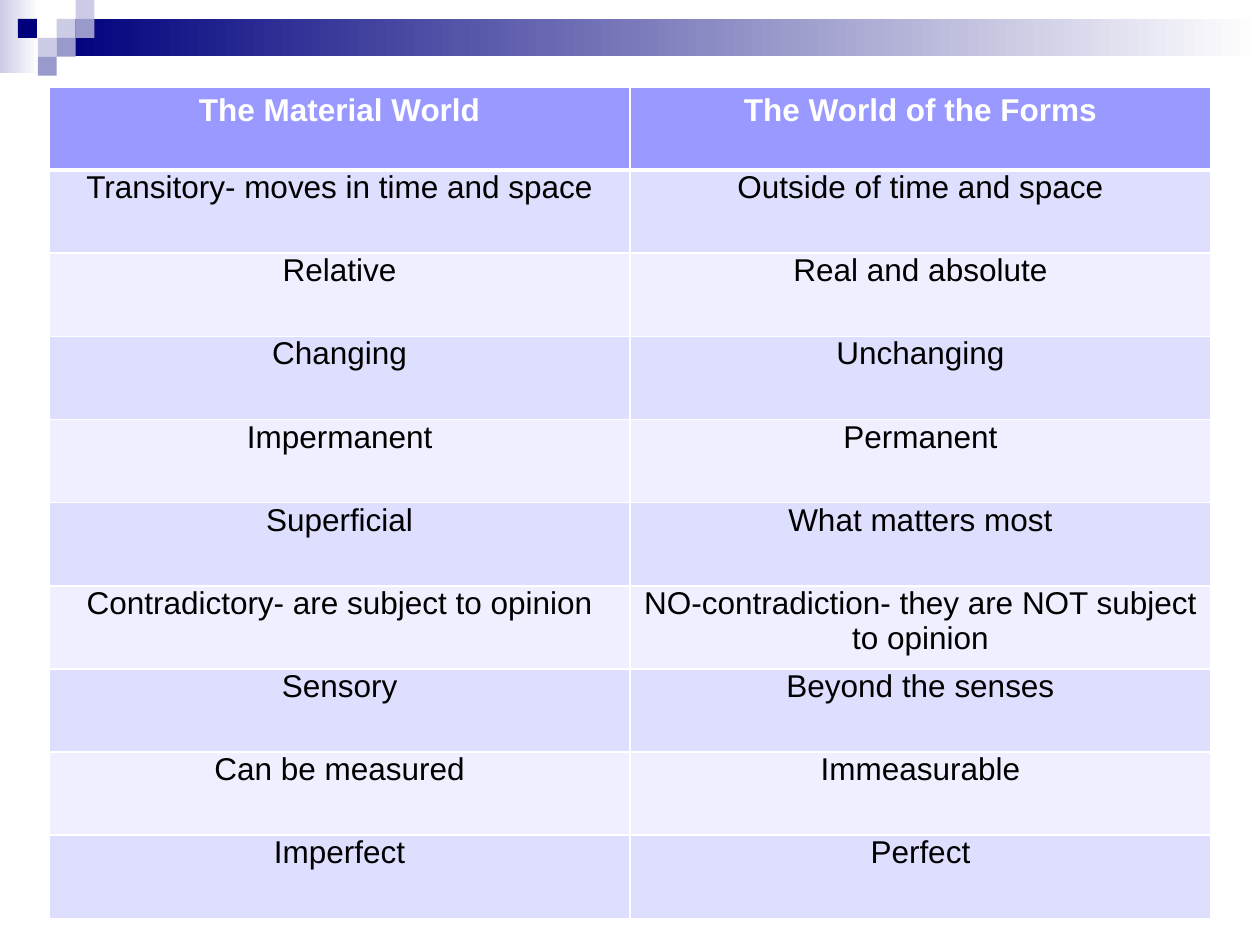
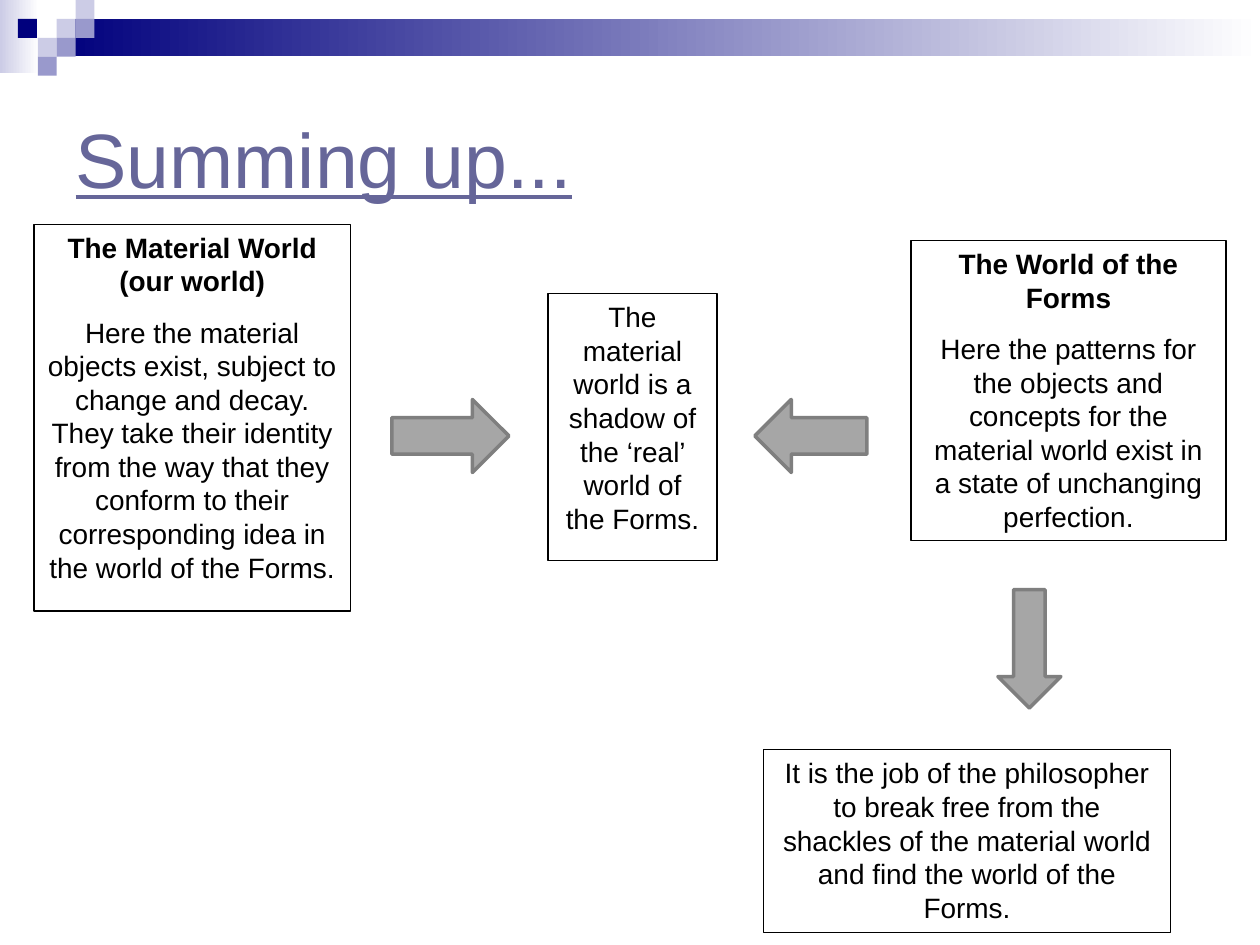
from lxml import etree
from pptx import Presentation
from pptx.dml.color import RGBColor as RGB
from pptx.enum.shapes import MSO_SHAPE as SHAPE
from pptx.enum.text import MSO_ANCHOR as ANCHOR, MSO_AUTO_SIZE as FIT, PP_ALIGN as ALIGN
from pptx.oxml.ns import qn
from pptx.util import Inches, Pt

# Style: the page is a grid of 100 columns by 75 rows
COLORS = {
    "navy": "00007D", "mist": "CCCCE6", "lilac": "9999CC", "title": "666699",
    "head": "9999FF", "odd": "DEDEFF", "even": "EFEFFF",
    "white": "FFFFFF", "black": "000000", "arrow": "A6A6A6", "edge": "7F7F7F",
}
FONT = "Arial"
WIDTH, HEIGHT = Inches(10), Inches(7.5)
COL, ROW = WIDTH / 100, HEIGHT / 75
TITLE_ONLY, BLANK = 5, 6


class Deck:
    def __init__(self):
        self.prs = Presentation()
        self.prs.slide_width, self.prs.slide_height = WIDTH, HEIGHT
        self.s = None

    @staticmethod
    def color(name):
        return RGB.from_string(COLORS[name])

    @staticmethod
    def place(x, y, w, h):
        return round(x * COL), round(y * ROW), round(w * COL), round(h * ROW)

    def new_slide(self, title=None):
        layout = self.prs.slide_layouts[TITLE_ONLY if title else BLANK]
        self.s = self.prs.slides.add_slide(layout)
        self.band()
        if title:
            self.title(title)

    def format(self, p, size, color, bold=False, align=ALIGN.CENTER):
        p.alignment = align
        for r in p.runs:
            r.font.name, r.font.size, r.font.bold = FONT, Pt(size), bold
            r.font.color.rgb = self.color(color)

    def shape(self, kind, at, fill, line=None, width=0.75):
        sp = self.s.shapes.add_shape(kind, *self.place(*at))
        sp.shadow.inherit = False
        sp.fill.solid()
        sp.fill.fore_color.rgb = self.color(fill)
        if line:
            sp.line.color.rgb = self.color(line)
            sp.line.width = Pt(width)
        else:
            sp.line.fill.background()
        return sp

    def fade(self, at, start):
        sp = self.shape(SHAPE.RECTANGLE, at, start)
        sp.fill.gradient()
        sp.fill.gradient_angle = 0
        for stop, name, pos in zip(sp.fill.gradient_stops, (start, "white"), (0, 1)):
            stop.color.rgb = self.color(name)
            stop.position = pos

    def band(self):
        """Fading band and checker squares at the top of each slide."""
        self.fade((0, 0, 3.1, 5.8), "mist")
        self.fade((4.5, 1.5, 95.5, 2.95), "navy")
        side = 1.5
        squares = [(3, 1, "mist"), (4, 0, "mist"), (4, 1, "lilac"), (2, 2, "mist"),
                   (0.95, 1, "navy"), (3, 2, "lilac"), (2, 3, "lilac")]
        for col, row, name in squares:
            self.shape(SHAPE.RECTANGLE, (col * side, row * side, side, side), name)

    def title(self, text):
        sp = self.s.shapes.title
        sp.left, sp.top, sp.width, sp.height = self.place(5, 5, 90, 15)
        tf = sp.text_frame
        tf.text = text
        tf.auto_size, tf.vertical_anchor = FIT.NONE, ANCHOR.MIDDLE
        p = tf.paragraphs[0]
        self.format(p, 44, "title", align=ALIGN.LEFT)
        p.runs[0].font.underline = True

    def box(self, at, body, heading=None):
        tf = self.shape(SHAPE.RECTANGLE, at, "white", "black").text_frame
        tf.word_wrap, tf.vertical_anchor = True, ANCHOR.TOP
        tf.text = f"{heading}\n{body}" if heading else body
        for p in tf.paragraphs:
            self.format(p, 16, "black", bold=p.text == heading)
            p.space_after = Pt(10)

    def arrow(self, kind, at):
        self.shape(kind, at, "arrow", "edge", 2)

    def border(self, cell, side, width):
        ln = etree.SubElement(cell._tc.get_or_add_tcPr(), qn(f"a:ln{side}"), w=str(Pt(width)))
        fill = etree.SubElement(ln, qn("a:solidFill"))
        etree.SubElement(fill, qn("a:srgbClr"), val=COLORS["white"])

    def table(self, at, rows):
        frame = self.s.shapes.add_table(len(rows), len(rows[0]), *self.place(*at))
        for i, row in enumerate(rows):
            for j, text in enumerate(row):
                cell = frame.table.cell(i, j)
                cell.text = text
                head = i == 0
                self.format(cell.text_frame.paragraphs[0], 18,
                            "white" if head else "black", bold=head)
                if not head:
                    cell.margin_left = cell.margin_right = Inches(0.07)
                    cell.margin_top = cell.margin_bottom = 0
                # The rule under the heading row is thicker
                for side, width in (("L", 1), ("R", 1), ("T", 3 if i == 1 else 1),
                                    ("B", 3 if head else 1)):
                    self.border(cell, side, width)
                cell.fill.solid()
                name = "head" if head else "odd" if i % 2 else "even"
                cell.fill.fore_color.rgb = self.color(name)


def main():
    deck = Deck()

    # Slide 1: the two worlds compared
    deck.new_slide()
    deck.table((3.9, 6.9, 92.2, 66), [
        ("The Material World", "The World of the Forms"),
        ("Transitory- moves in time and space", "Outside of time and space"),
        ("Relative", "Real and absolute"),
        ("Changing", "Unchanging"),
        ("Impermanent", "Permanent"),
        ("Superficial", "What matters most"),
        ("Contradictory- are subject to opinion",
         "NO-contradiction- they are NOT subject to opinion"),
        ("Sensory", "Beyond the senses"),
        ("Can be measured", "Immeasurable"),
        ("Imperfect", "Perfect"),
    ])

    # Slide 2: summary diagram
    deck.new_slide("Summing up...")
    deck.box((2.7, 17.8, 25.1, 30.7),
             "Here the material objects exist, subject to change and decay. They take "
             "their identity from the way that they conform to their corresponding idea "
             "in the world of the Forms.",
             "The Material World (our world)")
    deck.box((43.5, 23.3, 13.4, 21.2),
             "The material world is a shadow of the ‘real’ world of the Forms.")
    deck.box((72.3, 19.1, 25, 23.8),
             "Here the patterns for the objects and concepts for the material world "
             "exist in a state of unchanging perfection.",
             "The World of the Forms")
    deck.box((60.6, 59.5, 32.3, 14.5),
             "It is the job of the philosopher to break free from the shackles of the "
             "material world and find the world of the Forms.")
    deck.arrow(SHAPE.RIGHT_ARROW, (31.1, 31.7, 9.3, 5.8))
    deck.arrow(SHAPE.LEFT_ARROW, (59.9, 31.7, 8.9, 5.8))
    deck.arrow(SHAPE.DOWN_ARROW, (79.2, 46.8, 5, 9.4))

    deck.prs.save("out.pptx")


if __name__ == "__main__":
    main()
